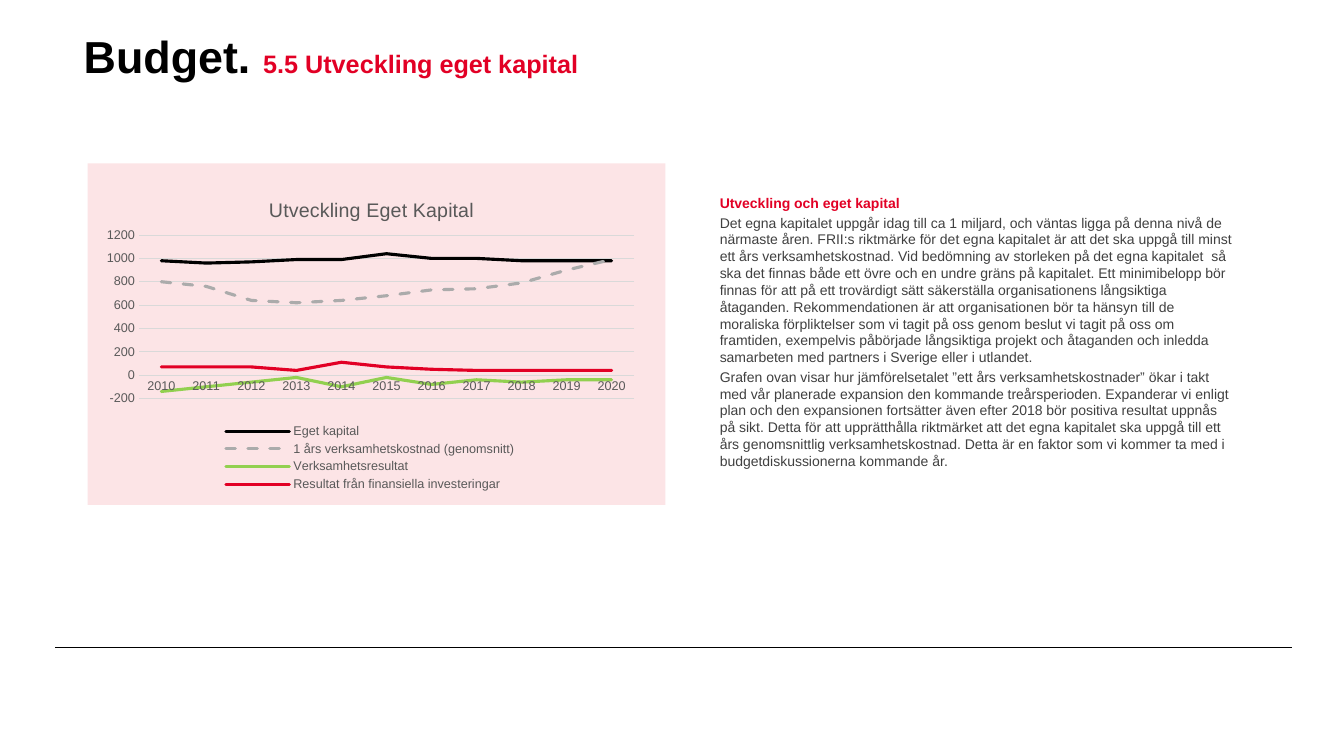
from lxml import etree
from pptx import Presentation
from pptx.chart.data import CategoryChartData
from pptx.dml.color import RGBColor
from pptx.enum.chart import XL_CHART_TYPE, XL_LEGEND_POSITION, XL_TICK_LABEL_POSITION, XL_TICK_MARK
from pptx.enum.dml import MSO_LINE
from pptx.enum.shapes import MSO_CONNECTOR, MSO_SHAPE
from pptx.enum.text import MSO_ANCHOR
from pptx.oxml.ns import qn
from pptx.util import Emu, Pt

LINE_CHART = XL_CHART_TYPE.LINE
BOTTOM = XL_LEGEND_POSITION.BOTTOM
NEXT_TO = XL_TICK_LABEL_POSITION.NEXT_TO_AXIS
NO_TICK = XL_TICK_MARK.NONE
DASH, SOLID = MSO_LINE.DASH, MSO_LINE.SOLID
STRAIGHT, RECT = MSO_CONNECTOR.STRAIGHT, MSO_SHAPE.RECTANGLE
TOP, MIDDLE = MSO_ANCHOR.TOP, MSO_ANCHOR.MIDDLE

SCALE = 9144  # EMU per px, 100 px to the inch
BLACK, RED, PINK, GREEN = "000000", "E20025", "FCE4E6", "92D050"
DARK, GREY, SILVER, PALE = "404040", "595959", "ABABAB", "D9D9D9"

YEARS = [str(year) for year in range(2010, 2021)]
SERIES = [
    ("Eget kapital", BLACK, SOLID,
     (980, 960, 970, 990, 990, 1040, 1000, 1000, 980, 980, 980)),
    ("1 års verksamhetskostnad (genomsnitt)", SILVER, DASH,
     (800, 760, 640, 620, 640, 680, 730, 740, 790, 900, 990)),
    ("Verksamhetsresultat", GREEN, SOLID,
     (-140, -100, -60, -20, -100, -20, -80, -40, -60, -40, -40)),
    ("Resultat från finansiella investeringar", RED, SOLID,
     (70, 70, 70, 40, 110, 70, 50, 40, 40, 40, 40)),
]
CAPITAL = (
    "Det egna kapitalet uppgår idag till ca 1 miljard, och väntas ligga på denna nivå de "
    "närmaste åren. FRII:s riktmärke för det egna kapitalet är att det ska uppgå till minst "
    "ett års verksamhetskostnad. Vid bedömning av storleken på det egna kapitalet  så ska det "
    "finnas både ett övre och en undre gräns på kapitalet. Ett minimibelopp bör finnas för att "
    "på ett trovärdigt sätt säkerställa organisationens långsiktiga åtaganden. "
    "Rekommendationen är att organisationen bör ta hänsyn till de moraliska förpliktelser som "
    "vi tagit på oss genom beslut vi tagit på oss om framtiden, exempelvis påbörjade "
    "långsiktiga projekt och åtaganden och inledda samarbeten med partners i Sverige eller i "
    "utlandet.")
GRAPH = (
    "Grafen ovan visar hur jämförelsetalet ”ett års verksamhetskostnader” ökar i takt med vår "
    "planerade expansion den kommande treårsperioden. Expanderar vi enligt plan och den "
    "expansionen fortsätter även efter 2018 bör positiva resultat uppnås på sikt. Detta för "
    "att upprätthålla riktmärket att det egna kapitalet ska uppgå till ett års genomsnittlig "
    "verksamhetskostnad. Detta är en faktor som vi kommer ta med i budgetdiskussionerna "
    "kommande år.")


def color(code):
    return RGBColor.from_string(code)


class Deck:
    def __init__(self, wide, high, font):
        self.prs = Presentation()
        self.prs.slide_width, self.prs.slide_height = self.px(wide, high)
        self.slide = self.prs.slides.add_slide(self.prs.slide_layouts[6])
        self.face = font

    def px(self, *sizes):
        return [Emu(size * SCALE) for size in sizes]

    def font(self, font, size, code, bold=False):
        font.name, font.size, font.bold = self.face, Pt(size), bold
        font.color.rgb = color(code)

    def stroke(self, line, code, width):
        line.color.rgb = color(code)
        line.width = Pt(width)

    def rule(self, x1, y1, x2, y2, code, width):
        line = self.slide.shapes.add_connector(STRAIGHT, *self.px(x1, y1, x2, y2))
        self.stroke(line.line, code, width)
        etree.SubElement(line._element.spPr, qn("a:effectLst"))

    def panel(self, box, code):
        shape = self.slide.shapes.add_shape(RECT, *self.px(*box))
        shape.shadow.inherit = False
        shape.fill.solid()
        shape.fill.fore_color.rgb = color(code)
        shape.line.fill.background()

    def text(self, box, paras, inset, anchor=TOP, pitch=1.0, gap=0):
        frame = self.slide.shapes.add_textbox(*self.px(*box)).text_frame
        frame.word_wrap = True
        frame.vertical_anchor = anchor
        (frame.margin_left, frame.margin_top,
         frame.margin_right, frame.margin_bottom) = self.px(*inset)
        for i, runs in enumerate(paras):
            para = frame.add_paragraph() if i else frame.paragraphs[0]
            para.line_spacing = pitch
            para.space_before = Pt(gap if i else 0)
            for words, *style in runs:
                run = para.add_run()
                run.text = words
                self.font(run.font, *style)

    def place(self, node, **spots):
        # Fixed layout inside the chart, as shares of its size
        for old in node.findall(qn("c:layout")):
            node.remove(old)
        layout = etree.Element(qn("c:layout"))
        manual = etree.SubElement(layout, qn("c:manualLayout"))
        for tag, value in spots.items():
            etree.SubElement(manual, qn("c:" + tag)).set("val", str(value))
        before = node.find(qn("c:overlay"))
        if before is None:
            node.insert(0, layout)
        else:
            before.addprevious(layout)

    def chart(self, box, title, years, series):
        data = CategoryChartData()
        data.categories = years
        for name, _, _, values in series:
            data.add_series(name, values)
        chart = self.slide.shapes.add_chart(LINE_CHART, *self.px(*box), data).chart
        self.font(chart.font, 10, BLACK)

        # Title and legend
        run = chart.chart_title.text_frame.paragraphs[0].add_run()
        run.text = title
        self.font(run.font, 14, GREY)
        chart.chart_title.include_in_layout = False
        chart.has_legend = True
        chart.legend.position = BOTTOM
        chart.legend.include_in_layout = False
        self.font(chart.legend.font, 9, GREY)

        # Axes
        years_axis, value_axis = chart.category_axis, chart.value_axis
        for axis in (years_axis, value_axis):
            axis.major_tick_mark = axis.minor_tick_mark = NO_TICK
            axis.tick_label_position = NEXT_TO
            self.font(axis.tick_labels.font, 9, GREY)
        self.stroke(years_axis.format.line, PALE, 0.75)
        value_axis.format.line.fill.background()
        self.stroke(value_axis.major_gridlines.format.line, PALE, 0.75)
        value_axis.minimum_scale, value_axis.maximum_scale = -200, 1200
        value_axis.major_unit = 200

        # Lines
        plot = chart.plots[0]
        plot.vary_by_categories = False
        for item, (_, code, dash, _) in zip(plot.series, series):
            item.smooth = False
            self.stroke(item.format.line, code, 2.25)
            item.format.line.dash_style = dash
            item.format.line._ln.set("cap", "rnd")

        edge = {"xMode": "edge", "yMode": "edge"}
        self.place(chart.chart_title._element, **edge, x=0.31, y=0.05)
        self.place(chart.legend._element, **edge, x=0.23, y=0.76, w=0.54, h=0.23)
        area = chart._chartSpace.chart.plotArea
        self.place(area, layoutTarget="inner", **edge, x=0.08, y=0.18, w=0.9, h=0.51)


def main():
    deck = Deck(1333, 750, "Arial")

    # Footer rule
    deck.rule(55, 642, 1281, 642, BLACK, 0.5)

    # Chart on its panel
    deck.panel((87, 162, 573, 339), PINK)
    deck.chart((94, 176, 546, 318), "Utveckling Eget Kapital", YEARS, SERIES)

    # Body text
    deck.text((704, 188, 528, 286), [
        [("Utveckling och eget kapital", 10, RED, True)],
        [(CAPITAL, 10, DARK)],
        [(GRAPH, 10, DARK)],
    ], (10, 5, 10, 5), gap=2)

    # Heading
    deck.text((79, 15, 1230, 87), [
        [("Budget. ", 32, BLACK, True), ("5.5 Utveckling eget kapital", 18, RED, True)],
    ], (4, 5, 10, 5), MIDDLE, 0.9)

    deck.prs.save("out.pptx")


if __name__ == "__main__":
    main()
